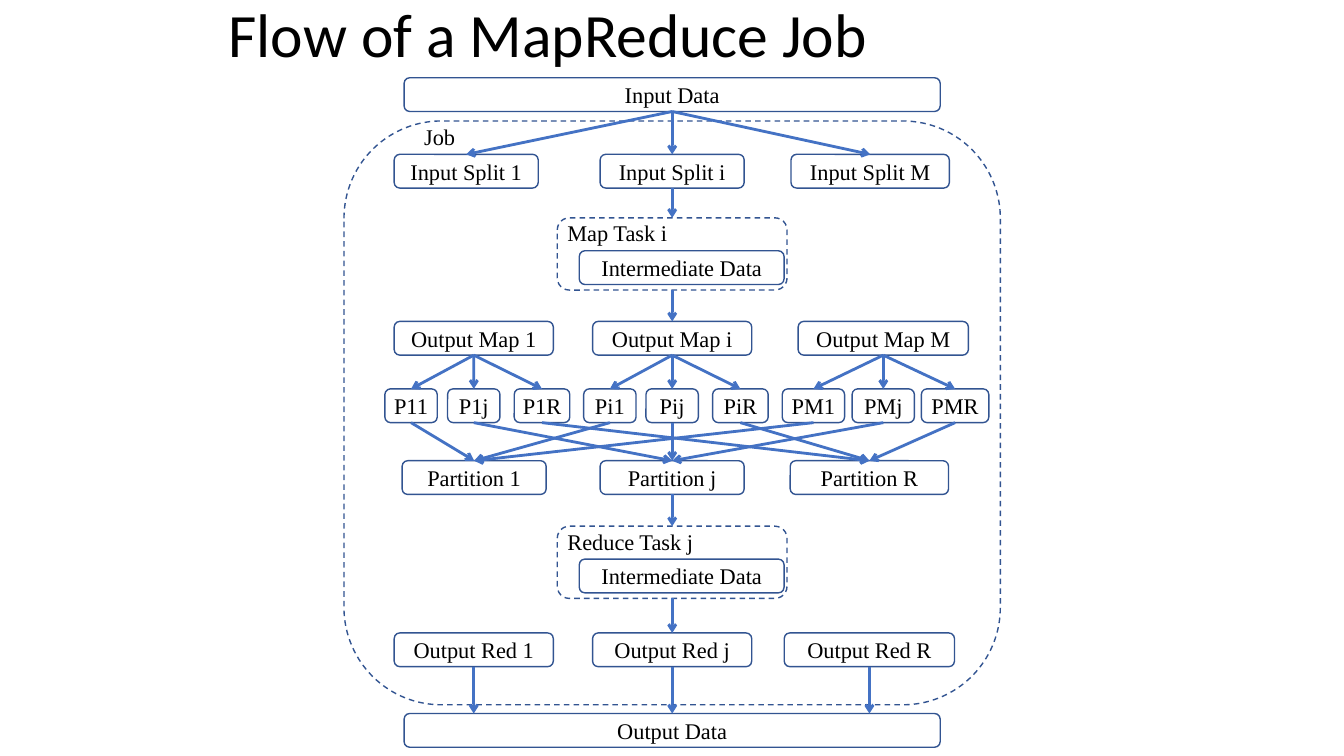
"""Build the slide that shows the flow of a MapReduce job."""
from lxml.etree import SubElement
from pptx import Presentation
from pptx.dml.color import RGBColor
from pptx.enum.dml import MSO_LINE
from pptx.enum.shapes import MSO_CONNECTOR, MSO_SHAPE
from pptx.enum.text import MSO_ANCHOR, PP_ALIGN
from pptx.oxml.ns import qn
from pptx.util import Cm, Pt

BOX_HEIGHT = 0.85
MIDDLE = 16.94
TEXT_FORMAT = {"name": "Times New Roman", "size": Pt(16)}
TITLE_FORMAT = {"name": "Calibri", "size": Pt(44)}
BOX_FRAME = {"word_wrap": True, "vertical_anchor": MSO_ANCHOR.MIDDLE}
PIECE_FRAME = BOX_FRAME | {"margin_left": Cm(0.15), "margin_right": Cm(0.15)}

presentation = Presentation()
presentation.slide_width = Cm(33.87)
presentation.slide_height = Cm(19.05)
slide = presentation.slides.add_slide(presentation.slide_layouts[6])


def add_box(text, center, top, width, height=BOX_HEIGHT, frame_format=BOX_FRAME):
    """Add a rounded box around a centre line, dashed if it has no text."""
    shape = slide.shapes.add_shape(MSO_SHAPE.ROUNDED_RECTANGLE, Cm(center - width / 2),
                                   Cm(top), Cm(width), Cm(height))
    shape.shadow.inherit = False
    shape.fill.background()
    shape.line.color.rgb = RGBColor.from_string("325491")
    shape.line.width = Pt(1)
    if text:
        shape.text_frame.text = text
        shape.text_frame.paragraphs[0].alignment = PP_ALIGN.CENTER
        for name, value in frame_format.items():
            setattr(shape.text_frame, name, value)
    else:
        shape.line.dash_style = MSO_LINE.DASH
    return shape


def add_arrow(source, target, straight_down=False):
    """Add an arrow from the bottom of one box to the top of another."""
    start = source.left + source.width // 2
    connector = slide.shapes.add_connector(MSO_CONNECTOR.STRAIGHT, start,
                                           source.top + source.height, start, target.top)
    connector.begin_connect(source, 2)
    if not straight_down:
        connector.end_connect(target, 0)
    connector.line.color.rgb = RGBColor.from_string("4472C4")
    connector.line.width = Pt(2)
    SubElement(connector.line._get_or_add_ln(), qn("a:tailEnd"), type="arrow")
    SubElement(connector._element.spPr, qn("a:effectLst"))


add_box("", MIDDLE, 3.05, 16.54, 14.71)
input_data = add_box("Input Data", MIDDLE, 1.96, 13.51)
output_data = add_box("Output Data", MIDDLE, 17.98, 13.51)

rows = {}
for name, suffixes, top, centers, widths in [
    ("Input Split", "1iM", 3.89, (11.75, MIDDLE, 21.93), (3.63, 3.63, 3.99)),
    ("Output Map", "1iM", 8.1, (11.94, MIDDLE, 22.26), (4.01, 4.01, 4.29)),
    ("Partition", "1jR", 11.61, (11.95, MIDDLE, 21.91), (3.63, 3.63, 3.99)),
    ("Output Red", "1jR", 15.95, (11.94, MIDDLE, 21.91), (4.01, 4.01, 4.29)),
]:
    rows[name] = [add_box(f"{name} {suffix}", center, top, width)
                  for suffix, center, width in zip(suffixes, centers, widths)]

for split in rows["Input Split"]:
    add_arrow(input_data, split)
for reduced in rows["Output Red"]:
    add_arrow(reduced, output_data, straight_down=True)

labels = [("Job", 10.44, 2.97)]
for name, top, before, after in [
    ("Map Task i", 5.49, "Input Split", "Output Map"),
    ("Reduce Task j", 13.26, "Partition", "Output Red"),
]:
    task = add_box("", MIDDLE, top, 5.79, 1.82)
    add_box("Intermediate Data", MIDDLE + 0.24, top + 0.83, 5.16)
    labels.append((name, 14.05, top - 0.08))
    add_arrow(rows[before][1], task)
    add_arrow(task, rows[after][1])

for output_map, map_suffix, centers, widths in zip(
    rows["Output Map"], "1iM",
    [(10.36, 11.94, 13.66), (15.37, MIDDLE, 18.66), (20.5, 22.26, 24.07)],
    [(1.32, 1.32, 1.4), (1.32, 1.32, 1.4), (1.57, 1.57, 1.7)],
):
    for partition, suffix, center, width in zip(rows["Partition"], "1jR", centers, widths):
        piece = add_box(f"P{map_suffix}{suffix}", center, 9.8, width,
                        frame_format=PIECE_FRAME)
        add_arrow(output_map, piece)
        add_arrow(piece, partition)

for text, left, top in labels:
    label = slide.shapes.add_textbox(Cm(left), Cm(top), Cm(3.7), Cm(0.95))
    label.text_frame.text = text

title = slide.shapes.add_textbox(Cm(5.51), Cm(-0.64), Cm(22.86), Cm(3.18))
title.text_frame.text = "Flow of a MapReduce Job"
title.text_frame.paragraphs[0].line_spacing = 0.9
for name, value in BOX_FRAME.items():
    setattr(title.text_frame, name, value)

for shape in slide.shapes:
    if shape.has_text_frame:
        font_format = TITLE_FORMAT if shape.shape_id == title.shape_id else TEXT_FORMAT
        for run in shape.text_frame.paragraphs[0].runs:
            run.font.color.rgb = RGBColor.from_string("000000")
            for name, value in font_format.items():
                setattr(run.font, name, value)

presentation.save("out.pptx")
